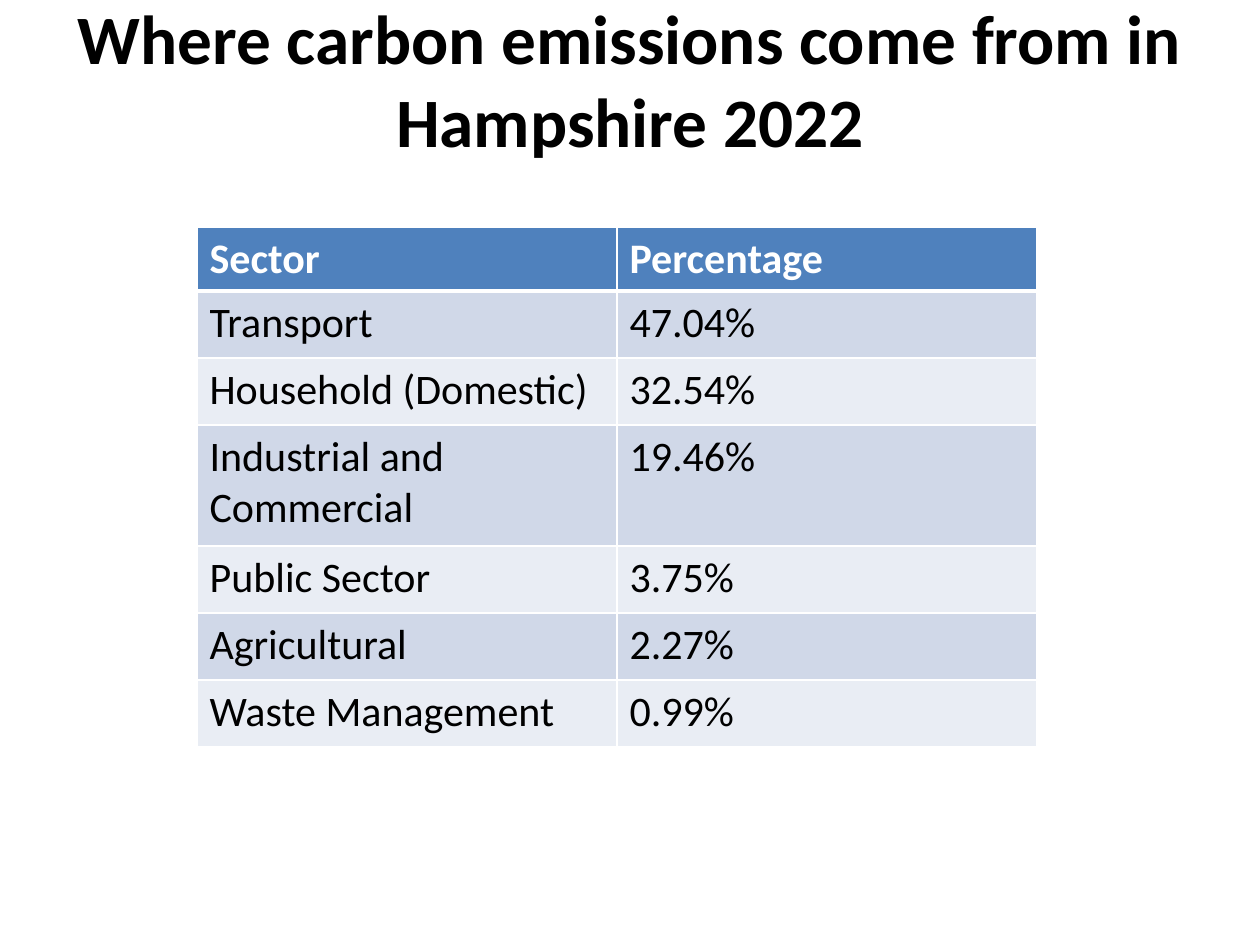
from lxml.etree import SubElement
from pptx import Presentation
from pptx.dml.color import RGBColor
from pptx.enum.text import MSO_ANCHOR, MSO_AUTO_SIZE, PP_ALIGN
from pptx.oxml.ns import qn
from pptx.util import Pt

TITLE = "Where carbon emissions come from in Hampshire 2022"
ROWS = [
    ("Sector", "Percentage"),
    ("Transport", "47.04%"),
    ("Household (Domestic)", "32.54%"),
    ("Industrial and Commercial", "19.46%"),
    ("Public Sector", "3.75%"),
    ("Agricultural", "2.27%"),
    ("Waste Management", "0.99%"),
]
ROW_HEIGHTS = [64, 67, 67, 121, 67, 67, 67]
COLUMN_WIDTH = 420
COLORS = {
    "header": "4F81BD",
    "odd": "D0D8E8",
    "even": "E9EDF4",
    "white": "FFFFFF",
    "black": "000000",
}
FONT = "Calibri"


def px(length):
    return round(length * 914400 / 126)


def color(name):
    return RGBColor.from_string(COLORS[name])


def set_font(font, size, color_name, bold):
    font.name = FONT
    font.size = Pt(size)
    font.bold = bold
    font.color.rgb = color(color_name)


def set_borders(cell, widths):
    """Draw white borders; widths maps each side (L, R, T, B) to points."""
    properties = cell._tc.get_or_add_tcPr()
    for index, (side, width) in enumerate(widths.items()):
        line = SubElement(properties, qn(f"a:ln{side}"), w=str(Pt(width)))
        fill = SubElement(line, qn("a:solidFill"))
        SubElement(fill, qn("a:srgbClr"), val=COLORS["white"])
        properties.insert(index, line)  # borders come before the cell fill


def add_title(slide):
    title = slide.shapes.title
    title.left, title.top, title.width, title.height = map(px, (63, 38, 1134, 157))
    frame = title.text_frame
    frame.text = TITLE
    frame.word_wrap = True
    frame.auto_size = MSO_AUTO_SIZE.NONE
    frame.vertical_anchor = MSO_ANCHOR.MIDDLE
    frame.margin_bottom = px(82)  # lifts the title clear of the table
    para = frame.paragraphs[0]
    para.alignment = PP_ALIGN.CENTER
    set_font(para.font, 39.6, "black", True)


def add_sector_table(slide):
    columns = len(ROWS[0])
    table = slide.shapes.add_table(
        len(ROWS), columns, px(197), px(227),
        px(COLUMN_WIDTH * columns), px(sum(ROW_HEIGHTS)),
    ).table
    for column in table.columns:
        column.width = px(COLUMN_WIDTH)
    for row_index, (texts, height) in enumerate(zip(ROWS, ROW_HEIGHTS)):
        table.rows[row_index].height = px(height)
        is_header = row_index == 0
        band = "header" if is_header else "odd" if row_index % 2 else "even"
        widths = {"L": 1, "R": 1, "T": 3 if row_index == 1 else 1, "B": 3 if is_header else 1}
        for column_index, text in enumerate(texts):
            cell = table.cell(row_index, column_index)
            cell.text = text
            cell.fill.solid()
            cell.fill.fore_color.rgb = color(band)
            set_font(cell.text_frame.paragraphs[0].font, 24,
                     "white" if is_header else "black", is_header)
            set_borders(cell, widths)


def main():
    deck = Presentation()
    deck.slide_width, deck.slide_height = px(1260), px(945)
    slide = deck.slides.add_slide(deck.slide_layouts[5])
    add_title(slide)
    add_sector_table(slide)
    deck.save("out.pptx")


if __name__ == "__main__":
    main()
